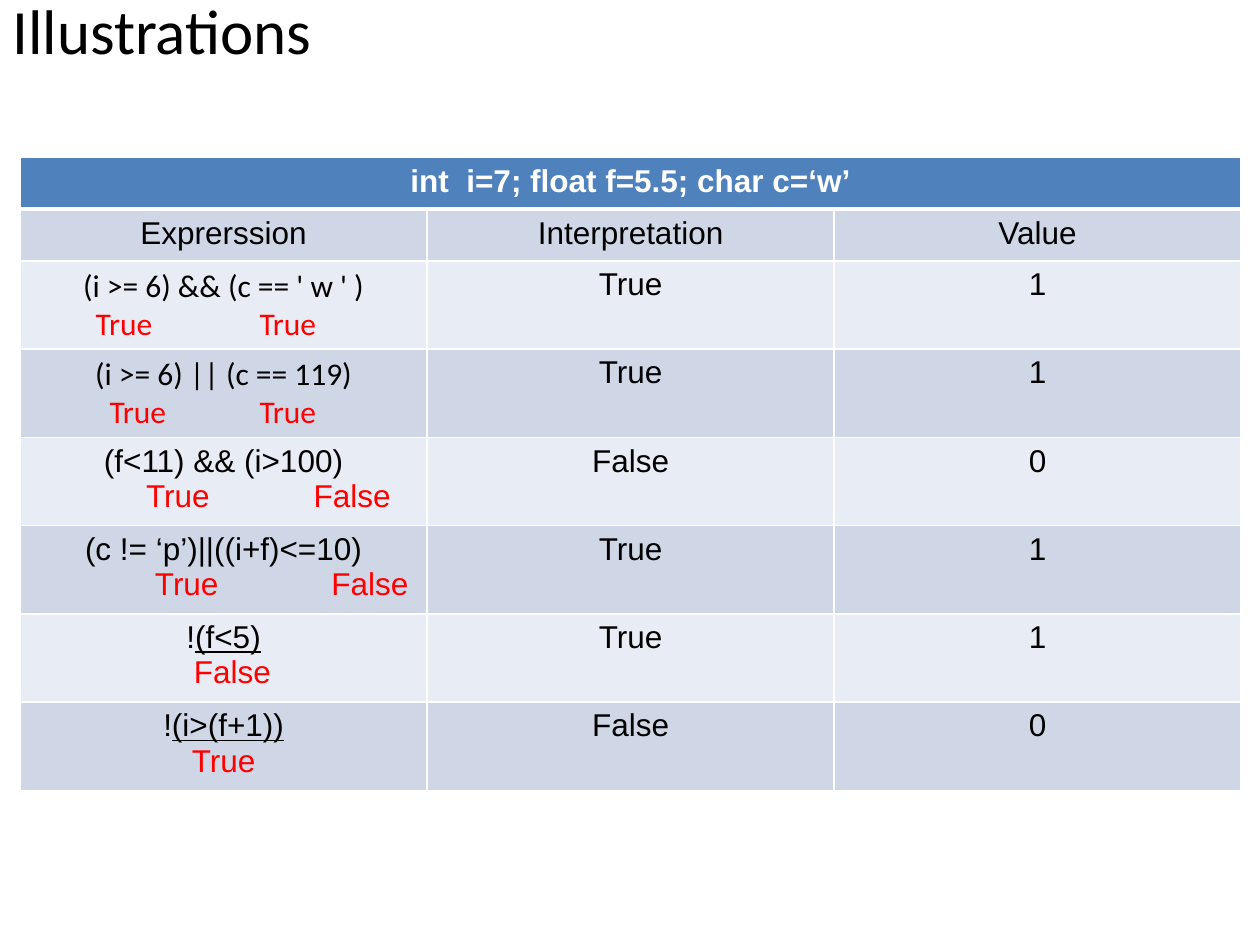
from dataclasses import dataclass

from lxml import etree
from pptx import Presentation
from pptx.dml.color import RGBColor
from pptx.enum.text import MSO_ANCHOR, PP_ALIGN
from pptx.oxml.ns import qn
from pptx.util import Inches, Pt

CENTER = PP_ALIGN.CENTER
LEFT = PP_ALIGN.LEFT
MIDDLE = MSO_ANCHOR.MIDDLE
BLACK = RGBColor(0x00, 0x00, 0x00)
WHITE = RGBColor(0xFF, 0xFF, 0xFF)
RED = RGBColor(0xFF, 0x00, 0x00)
BLUE = RGBColor(0x4F, 0x81, 0xBD)
DARK_BAND = RGBColor(0xCF, 0xD7, 0xE7)
LIGHT_BAND = RGBColor(0xE8, 0xEC, 0xF4)

DECLARATION = "int  i=7; float f=5.5; char c=‘w’"
HEADINGS = ("Exprerssion", "Interpretation", "Value")
COLUMN_WIDTH = 3.23
ROW_HEIGHT = 0.41


@dataclass
class Example:
    expression: str
    operands: tuple[str, ...]
    result: str
    value: str
    font: str = "Arial"
    tabs: tuple[float, ...] = ()
    indent: float = 0
    negated: bool = False


EXAMPLES = (
    Example("(i >= 6) && (c == ' w ' )", ("True", "True"), "True", "1",
            font="Calibri", tabs=(0.5, 1.8)),
    Example("(i >= 6) || (c == 119)", ("True", "True"), "True", "1",
            font="Calibri", tabs=(0.61, 1.8)),
    Example("(f<11) && (i>100)", ("True", "False"), "False", "0", tabs=(0.9, 2.23)),
    Example("(c != ‘p’)||((i+f)<=10)", ("True", "False"), "True", "1", tabs=(0.97, 2.37)),
    Example("(f<5)", ("False",), "True", "1", indent=0.14, negated=True),
    Example("(i>(f+1))", ("True",), "False", "0", negated=True),
)


def add_span(para, text: str, *, size: float = 18, font: str = "Arial",
             color: RGBColor = BLACK, bold: bool = False, underline: bool = False) -> None:
    span = para.add_run()
    span.text = text
    span.font.size = Pt(size)
    span.font.name = font
    span.font.color.rgb = color
    span.font.bold = bold
    span.font.underline = underline


def set_tabs(para, positions: tuple[float, ...]) -> None:
    tab_list = etree.SubElement(para._p.get_or_add_pPr(), qn("a:tabLst"))
    for position in positions:
        etree.SubElement(tab_list, qn("a:tab"), pos=str(Inches(position)), algn="l")


def style_cell(cell, fill: RGBColor, bottom: float = 1, top: float = 1) -> None:
    cell.fill.solid()
    cell.fill.fore_color.rgb = fill
    properties = cell._tc.get_or_add_tcPr()
    sides = (("a:lnL", 1), ("a:lnR", 1), ("a:lnT", top), ("a:lnB", bottom))
    for index, (side, width) in enumerate(sides):
        line = etree.Element(qn(side), w=str(Pt(width)))
        solid = etree.SubElement(line, qn("a:solidFill"))
        etree.SubElement(solid, qn("a:srgbClr"), val=str(WHITE))
        properties.insert(index, line)


def fill_cell(cell, text: str, color: RGBColor = BLACK, bold: bool = False) -> None:
    para = cell.text_frame.paragraphs[0]
    para.alignment = CENTER
    add_span(para, text, color=color, bold=bold)


def fill_expression(cell, example: Example) -> None:
    para = cell.text_frame.paragraphs[0]
    para.alignment = CENTER
    if example.negated:
        add_span(para, "!")
    add_span(para, example.expression, font=example.font, underline=example.negated)

    truth = cell.text_frame.add_paragraph()
    if example.tabs:
        truth.alignment = LEFT
        set_tabs(truth, example.tabs)
        text = "".join("\t" + operand for operand in example.operands)
    else:
        truth.alignment = CENTER
        truth._p.get_or_add_pPr().set("marL", str(Inches(example.indent)))
        text = example.operands[0]
    add_span(truth, text, font=example.font, color=RED)


def add_title(page, text: str) -> None:
    box = page.shapes.add_textbox(Inches(0), Inches(0), Inches(9), Inches(0.47))
    box.text_frame.word_wrap = True
    box.text_frame.vertical_anchor = MIDDLE
    add_span(box.text_frame.paragraphs[0], text, size=36, font="Calibri")


def add_examples(page) -> None:
    row_count = len(EXAMPLES) + 2
    column_count = len(HEADINGS)
    table = page.shapes.add_table(
        row_count, column_count, Inches(0.16), Inches(1.25),
        Inches(COLUMN_WIDTH * column_count), Inches(ROW_HEIGHT * row_count)).table
    for column in table.columns:
        column.width = Inches(COLUMN_WIDTH)
    for index, row in enumerate(table.rows):
        row.height = Inches(ROW_HEIGHT)
        band = DARK_BAND if index % 2 else LIGHT_BAND
        for cell in row.cells:
            style_cell(cell, band if index else BLUE,
                       bottom=1 if index else 3, top=3 if index == 1 else 1)

    table.cell(0, 0).merge(table.cell(0, column_count - 1))
    fill_cell(table.cell(0, 0), DECLARATION, color=WHITE, bold=True)
    for column, heading in enumerate(HEADINGS):
        fill_cell(table.cell(1, column), heading)
    for row, example in enumerate(EXAMPLES, start=2):
        fill_expression(table.cell(row, 0), example)
        fill_cell(table.cell(row, 1), example.result)
        fill_cell(table.cell(row, 2), example.value)


def main() -> None:
    deck = Presentation()
    deck.slide_width = Inches(10)
    deck.slide_height = Inches(7.5)
    page = deck.slides.add_slide(deck.slide_layouts[6])
    add_title(page, "Illustrations")
    add_examples(page)
    deck.save("out.pptx")


if __name__ == "__main__":
    main()
